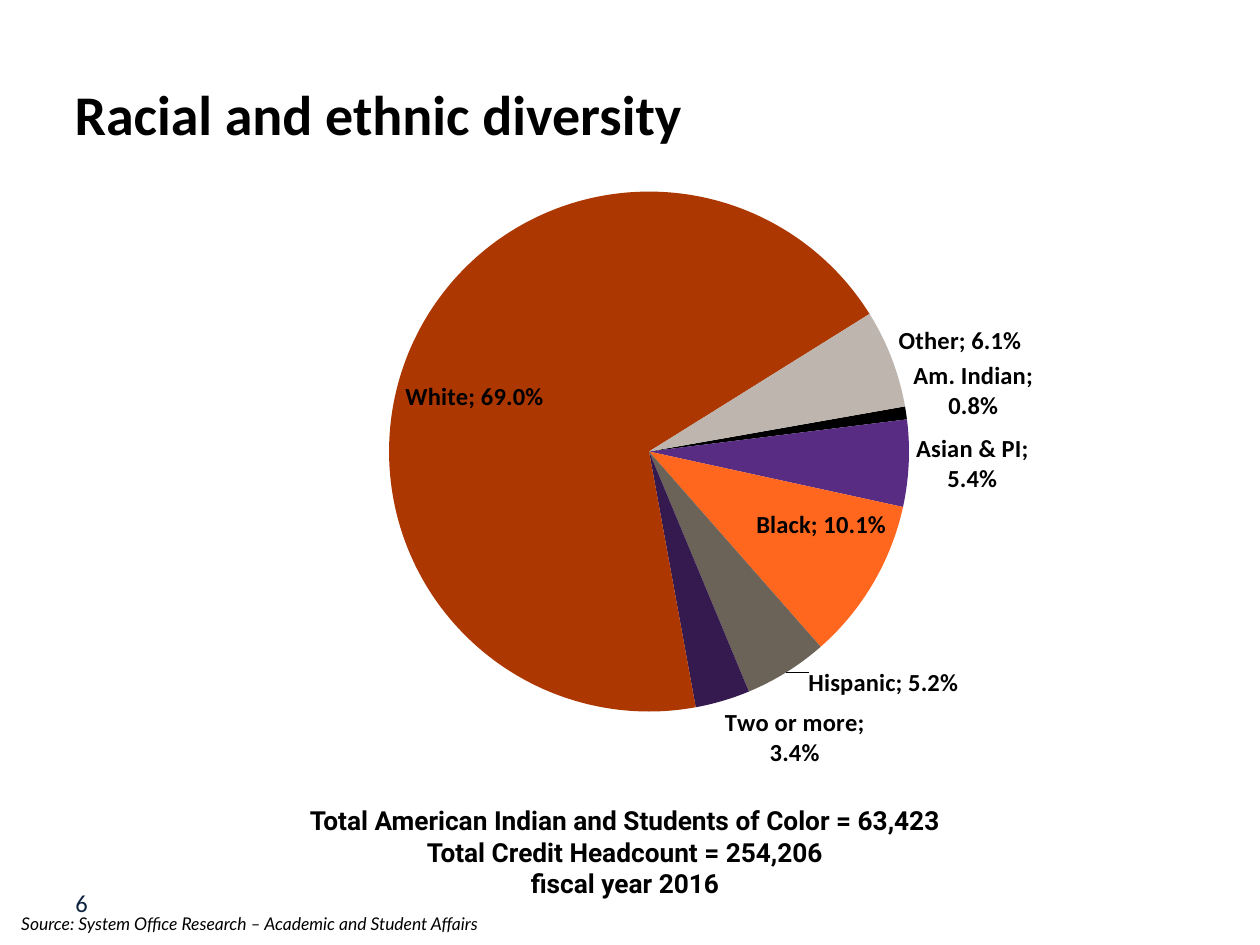
from copy import deepcopy
from lxml import etree
from pptx import Presentation, util as u
from pptx.chart.data import CategoryChartData
from pptx.dml.color import RGBColor
from pptx.enum import chart as ch, text as t
from pptx.oxml import parse_xml
from pptx.oxml.ns import nsdecls, qn

# Content
SHARES = [  # category, share, colour
    ("Am. Indian", 0.008, "000000"),
    ("Asian & PI", 0.054, "582C83"),
    ("Black", 0.101, "FF671F"),
    ("Hispanic", 0.052, "6B6258"),
    ("Two or more", 0.034, "351A4F"),
    ("White", 0.69, "AC3700"),
    ("Other", 0.061, "BDB5AE"),
]
TITLE = ["Racial and ethnic diversity"]
TOTALS = [
    "Total American Indian and Students of Color = 63,423",
    "Total Credit Headcount = 254,206",
    "fiscal year 2016",
]
SOURCE = ["Source: System Office Research – Academic and Student Affairs"]

# Theme: type and colour of each part
THEME = {
    "title": dict(name="Calibri", size=32, color="000000", bold=True),
    "chart": dict(name="Arial", size=18.6, color="000000", bold=True),
    "label": dict(name="Calibri", size=14, color="000000", bold=True),
    "total": dict(name="Roboto", size=15, color="000000", bold=True),
    "note": dict(name="Lato", size=10, color="000000", italic=True),
    "page": dict(name="Calibri", size=14, color="0C2340"),
}
WIDE, HIGH = 10, 7.5
START = 80  # angle of the first slice
PLOT = dict(x=0.207, y=0.157, w=0.578, h=0.753)  # shares of the chart
SHIFT = {"Hispanic": (0.02, -0.015)}  # labels moved off their slice

# Parts: lines, style, box as shares of the slide, alignment, anchor
MID, TOP = t.MSO_ANCHOR.MIDDLE, t.MSO_ANCHOR.TOP
LEFT, CENTER = t.PP_ALIGN.LEFT, t.PP_ALIGN.CENTER
PARTS = [
    (["6"], "page", (0.05, 0.933, 0.217, 0.045), LEFT, TOP),
    (TITLE, "title", (0.042, 0.081, 0.517, 0.077), CENTER, MID),
    (TOTALS, "total", (0.025, 0.844, 0.942, 0.115), CENTER, MID),
    (SOURCE, "note", (0.007, 0.96, 0.611, 0.036), LEFT, TOP),
]
PIE = (0.161, 0.081, 0.714, 0.744)


def place(box):
    return [u.Inches(part * full) for part, full in zip(box, (WIDE, HIGH) * 2)]


def style(font, kind):
    for key, val in THEME[kind].items():
        if key == "color":
            font.color.rgb = RGBColor.from_string(val)
        else:
            setattr(font, key, u.Pt(val) if key == "size" else val)


def write(slide, lines, kind, box, align, anchor):
    frame = slide.shapes.add_textbox(*place(box)).text_frame
    frame.word_wrap = True
    frame.vertical_anchor = anchor
    for i, line in enumerate(lines):
        para = frame.add_paragraph() if i else frame.paragraphs[0]
        para.alignment = align
        run = para.add_run()
        run.text = line
        style(run.font, kind)


def layout(spots, inner=False):
    target = '<c:layoutTarget val="inner"/>' if inner else ""
    modes = "".join(f'<c:{k}Mode val="edge"/>' for k in "xy") if inner else ""
    vals = "".join(f'<c:{k} val="{v}"/>' for k, v in spots.items())
    return parse_xml(f'<c:layout {nsdecls("c")}><c:manualLayout>{target}{modes}'
                     f"{vals}</c:manualLayout></c:layout>")


def draw_pie(slide):
    data = CategoryChartData(number_format="0.0%")
    data.categories = [name for name, _, _ in SHARES]
    data.add_series("Series 1", [val for _, val, _ in SHARES])
    chart = slide.shapes.add_chart(ch.XL_CHART_TYPE.PIE, *place(PIE), data).chart
    chart.has_legend = chart.has_title = False
    style(chart.font, "chart")

    # Plot area and first slice
    area = chart.plots[0]
    area.vary_by_categories = True
    pie = area._element
    for old in pie.getparent().findall(qn("c:layout")):
        pie.getparent().remove(old)
    pie.getparent().insert(0, layout(PLOT, True))
    for old in pie.findall(qn("c:firstSliceAng")):
        pie.remove(old)
    etree.SubElement(pie, qn("c:firstSliceAng")).set("val", str(START))

    # Slices
    series = area.series[0]
    for i, (_, _, color) in enumerate(SHARES):
        fill = series.points[i].format.fill
        fill.solid()
        fill.fore_color.rgb = RGBColor.from_string(color)

    # Labels
    labels = series.data_labels
    form = dict(show_value=True, show_category_name=True, show_percentage=False,
                number_format="0.0%", number_format_is_linked=False,
                position=ch.XL_LABEL_POSITION.BEST_FIT)
    for key, val in form.items():
        setattr(labels, key, val)
    style(labels.font, "label")
    root = labels._element
    mark = etree.Element(qn("c:separator"))
    mark.text = "; "
    last = root.find(qn("c:showBubbleSize"))
    if last is None:
        last = root.find(qn("c:showPercent"))
    last.addnext(mark)

    # Moved labels share the format of the rest
    rest = [kid for kid in root if kid.tag != qn("c:showLeaderLines")]
    for i, (name, _, _) in enumerate(SHARES):
        if name in SHIFT:
            label = etree.Element(qn("c:dLbl"))
            etree.SubElement(label, qn("c:idx")).set("val", str(i))
            label.append(layout(dict(zip("xy", SHIFT[name]))))
            label.extend(deepcopy(kid) for kid in rest)
            root.insert(0, label)


def main():
    deck = Presentation()
    deck.slide_width, deck.slide_height = u.Inches(WIDE), u.Inches(HIGH)
    slide = deck.slides.add_slide(deck.slide_layouts[6])
    draw_pie(slide)
    for part in PARTS:
        write(slide, *part)
    deck.save("out.pptx")


if __name__ == "__main__":
    main()
